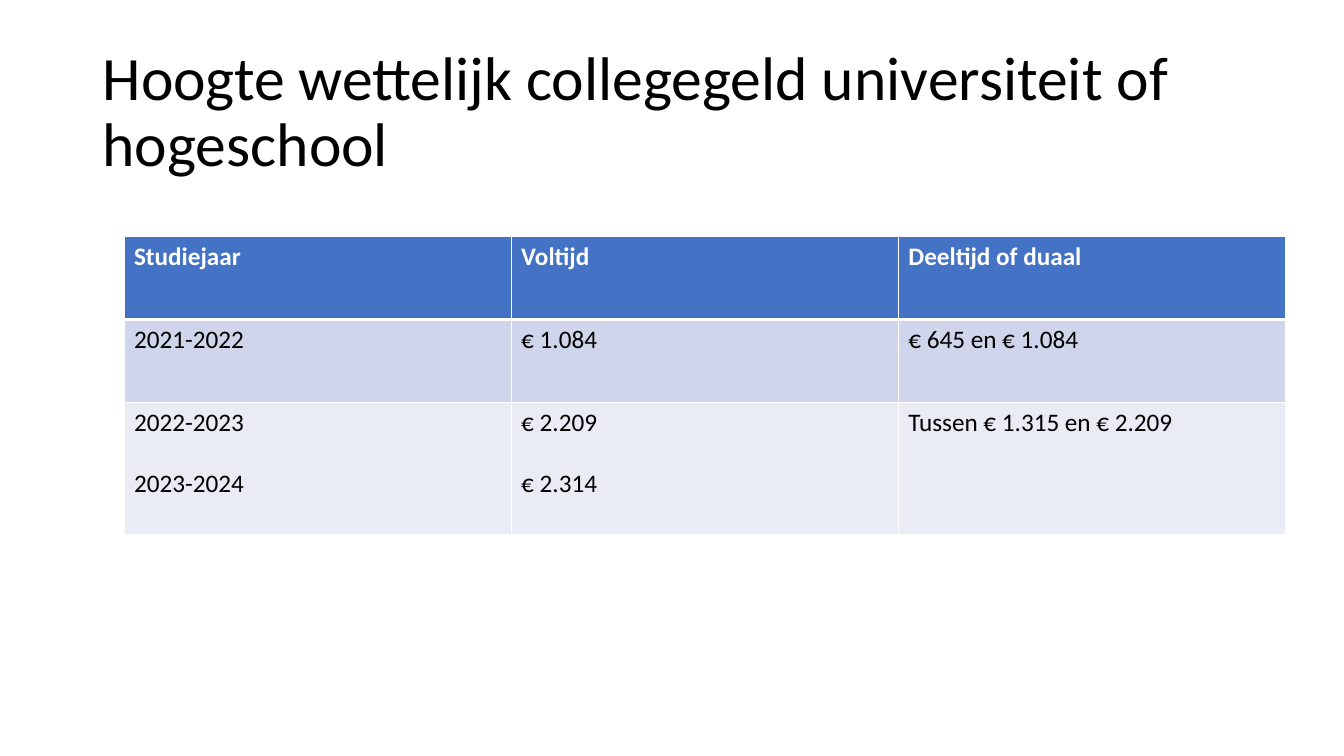
from lxml import etree
from pptx import Presentation
from pptx.dml.color import RGBColor
from pptx.enum.text import MSO_ANCHOR
from pptx.oxml.ns import qn
from pptx.util import Inches, Pt

MIDDLE = MSO_ANCHOR.MIDDLE
COLORS = {"white": "FFFFFF", "black": "000000", "header": "4472C4",
          "dark_band": "CFD5EA", "light_band": "E9EBF5"}
FEES = [
    [["Studiejaar"], ["Voltijd"], ["Deeltijd of duaal"]],
    [["2021-2022"], ["€ 1.084"], ["€ 645 en € 1.084"]],
    [["2022-2023", "2023-2024"], ["€ 2.209", "€ 2.314"],
     ["Tussen € 1.315 en € 2.209"]],
]


class SlideBuilder:
    """Holds the style and the current slide."""

    font = "Calibri"

    def __init__(self, prs):
        self.s = prs.slides.add_slide(prs.slide_layouts[6])

    def color(self, name):
        return RGBColor.from_string(COLORS[name])

    def run(self, p, text, size, color, bold=False):
        r = p.add_run()
        r.text = text
        r.font.name = self.font
        r.font.size = Pt(size)
        r.font.bold = bold
        r.font.color.rgb = self.color(color)

    def title(self, text, left, top, width, height):
        box = self.s.shapes.add_textbox(
            Inches(left), Inches(top), Inches(width), Inches(height))
        tf = box.text_frame
        tf.word_wrap = True
        tf.vertical_anchor = MIDDLE
        p = tf.paragraphs[0]
        p.line_spacing = 0.9
        self.run(p, text, 44, "black")

    def border(self, cell, side, width):
        ln = etree.SubElement(cell._tc.get_or_add_tcPr(), qn("a:" + side),
                              w=str(Pt(width)))
        fill = etree.SubElement(ln, qn("a:solidFill"))
        etree.SubElement(fill, qn("a:srgbClr"), val=COLORS["white"])

    def cell(self, cell, lines, fill, color, bold, top, bottom):
        for side, width in (("lnL", 1), ("lnR", 1), ("lnT", top), ("lnB", bottom)):
            self.border(cell, side, width)
        cell.fill.solid()
        cell.fill.fore_color.rgb = self.color(fill)
        tf = cell.text_frame
        for i, line in enumerate(lines):
            p = tf.add_paragraph() if i else tf.paragraphs[0]
            if i:
                p.space_before = Pt(22)
            self.run(p, line, 18, color, bold)

    def table(self, rows, left, top, col_width, heights):
        cols = len(rows[0])
        table = self.s.shapes.add_table(
            len(rows), cols, Inches(left), Inches(top),
            Inches(col_width * cols), Inches(sum(heights))).table
        for col in table.columns:
            col.width = Inches(col_width)
        fills = ("header", "dark_band", "light_band")
        for i, (row, height) in enumerate(zip(rows, heights)):
            table.rows[i].height = Inches(height)
            header = i == 0
            for j, lines in enumerate(row):
                self.cell(table.cell(i, j), lines, fills[i],
                          "white" if header else "black", header,
                          3 if i == 1 else 1, 3 if header else 1)


def main():
    prs = Presentation()
    prs.slide_width = Inches(13.33)
    prs.slide_height = Inches(7.5)
    slide = SlideBuilder(prs)
    slide.title("Hoogte wettelijk collegegeld universiteit of hogeschool",
                0.92, 0.4, 11.5, 1.45)
    slide.table(FEES, 1.23, 2.35, 3.84, (0.82, 0.82, 1.31))
    prs.save("out.pptx")


if __name__ == "__main__":
    main()
